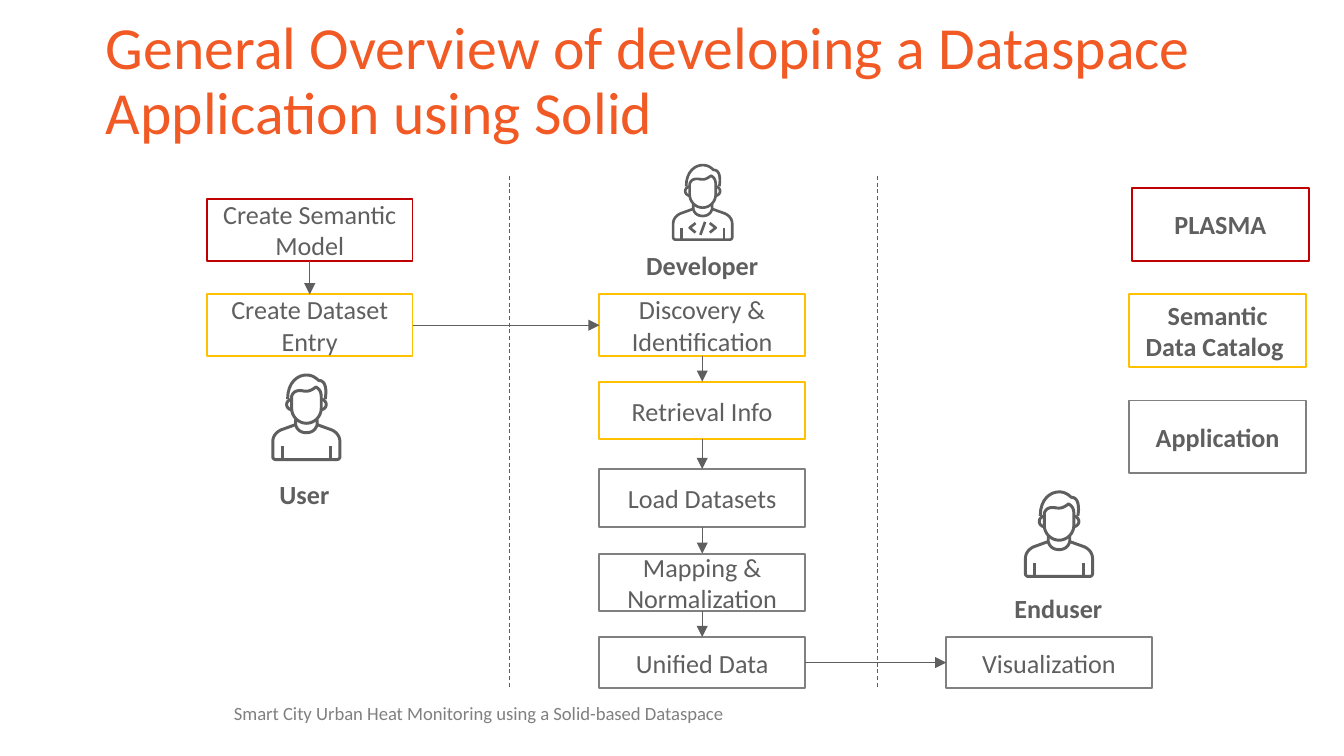
"""Build the overview slide of developing a dataspace application using Solid."""
import pptx
import pptx.dml.color
import pptx.enum.dml
import pptx.enum.shapes
import pptx.enum.text
import pptx.oxml
import pptx.oxml.ns
import pptx.util

Inches = pptx.util.Inches
Pt = pptx.util.Pt
Anchor = pptx.enum.text.MSO_ANCHOR
Align = pptx.enum.text.PP_ALIGN

THEME = {
    "font": "Calibri",
    "title": "F15A24", "ink": "5F5F5F", "footer": "808080",
    "plasma": "C00000", "catalog": "FFC000", "application": "808080",
    "title_size": 32, "body_size": 14, "footer_size": 10,
    "box_line": 1, "flow_line": 0.5, "icon_line": 1.6,
}

TITLE = "General Overview of developing a Dataspace Application using Solid"
FOOTER = "Smart City Urban Heat Monitoring using a Solid-based Dataspace"

STEP_WIDTH = 1.53
USER_LEFT, DEVELOPER_LEFT, ENDUSER_LEFT = 1.54, 4.46, 7.04
STEPS = [
    ("Create Semantic Model", USER_LEFT, 1.48, 0.46, "plasma"),
    ("Create Dataset Entry", USER_LEFT, 2.19, 0.46, "catalog"),
    ("Discovery & Identification", DEVELOPER_LEFT, 2.19, 0.46, "catalog"),
    ("Retrieval Info", DEVELOPER_LEFT, 2.84, 0.43, "catalog"),
    ("Load Datasets", DEVELOPER_LEFT, 3.49, 0.43, "application"),
    ("Mapping & Normalization", DEVELOPER_LEFT, 4.12, 0.43, "application"),
    ("Unified Data", DEVELOPER_LEFT, 4.74, 0.38, "application"),
    ("Visualization", ENDUSER_LEFT, 4.74, 0.38, "application"),
]
LEGEND_SIZE = (1.32, 0.54)
LEGEND = [
    ("PLASMA", 8.42, 1.4, "plasma"),
    ("Semantic Data Catalog ", 8.4, 2.19, "catalog"),
    ("Application", 8.4, 2.98, "application"),
]
ROLES = [
    ("User", (1.98, 3.51, 0.59, 0.34)),
    ("Developer", (4.71, 1.81, 1.22, 0.34)),
    ("Enduser", (7.45, 4.36, 0.86, 0.34)),
]
LANE_DIVIDERS = [3.79, 6.53]
LANE_TOP, LANE_BOTTOM = 1.31, 5.12

PERSON = [
    [(0.18, 0.38), (0.07, 0.42), (0.03, 0.44, 0.01, 0.47, 0.01, 0.51), (0.01, 0.62),
     (0.01, 0.63, 0.02, 0.64, 0.03, 0.64), (0.49, 0.64),
     (0.5, 0.64, 0.51, 0.63, 0.51, 0.62), (0.51, 0.51),
     (0.51, 0.47, 0.49, 0.44, 0.45, 0.42), (0.34, 0.38)],
    [(0.18, 0.34), (0.18, 0.38), (0.19, 0.42, 0.22, 0.44, 0.26, 0.44),
     (0.3, 0.44, 0.33, 0.42, 0.34, 0.38), (0.34, 0.34)],
    [(0.15, 0.17), (0.15, 0.26), (0.15, 0.32, 0.2, 0.37, 0.26, 0.37),
     (0.32, 0.37, 0.37, 0.32, 0.37, 0.26), (0.37, 0.17),
     (0.37, 0.13, 0.35, 0.11, 0.33, 0.1), (0.28, 0.14, 0.26, 0.13, 0.24, 0.13),
     (0.2, 0.12, 0.16, 0.13, 0.15, 0.17)],
    [(0.12, 0.19), (0.12, 0.06, 0.2, 0.01, 0.26, 0.01),
     (0.3, 0.01, 0.33, 0.03, 0.35, 0.05), (0.41, 0.05, 0.41, 0.13, 0.4, 0.19)],
    [(0.15, 0.19), (0.1, 0.2, 0.1, 0.26, 0.15, 0.27)],
    [(0.37, 0.19), (0.42, 0.2, 0.42, 0.26, 0.37, 0.27)],
    [(0.08, 0.54), (0.08, 0.64)],
    [(0.44, 0.54), (0.44, 0.64)],
]
CODE_SIGN = [
    [(0.2, 0.5), (0.15, 0.54), (0.2, 0.58)],
    [(0.32, 0.5), (0.37, 0.54), (0.32, 0.58)],
    [(0.28, 0.49), (0.24, 0.6)],
]
ICONS = [
    (2.02, 2.78, 1, PERSON),
    (5, 1.22, 0.88, PERSON + CODE_SIGN),
    (7.62, 3.65, 1, PERSON),
]


def color(name):
    return pptx.dml.color.RGBColor.from_string(THEME[name])


def write(shape, text, size="body_size", ink="ink", bold=False, align=Align.LEFT,
          anchor=Anchor.TOP, spacing=None):
    frame = shape.text_frame
    frame.word_wrap = True
    frame.vertical_anchor = anchor
    paragraph = frame.paragraphs[0]
    paragraph.alignment = align
    paragraph.line_spacing = spacing
    run = paragraph.add_run()
    run.text = text
    run.font.name = THEME["font"]
    run.font.size = Pt(THEME[size])
    run.font.bold = bold
    run.font.color.rgb = color(ink)
    return frame


def add_text(slide, bounds, text, **style):
    return write(slide.shapes.add_textbox(*map(Inches, bounds)), text, **style)


def add_box(slide, bounds, text, outline, bold=False):
    rectangle = pptx.enum.shapes.MSO_SHAPE.RECTANGLE
    shape = slide.shapes.add_shape(rectangle, *map(Inches, bounds))
    shape.shadow.inherit = False
    shape.fill.background()
    shape.line.color.rgb = color(outline)
    shape.line.width = Pt(THEME["box_line"])
    write(shape, text, bold=bold, align=Align.CENTER, anchor=Anchor.MIDDLE)
    return shape


def add_line(slide, start=(0, 0), end=(0, 0)):
    straight = pptx.enum.shapes.MSO_CONNECTOR.STRAIGHT
    connector = slide.shapes.add_connector(straight, *map(Inches, start + end))
    connector.line.color.rgb = color("ink")
    connector.line.width = Pt(THEME["flow_line"])
    properties = connector._element.spPr
    properties.append(pptx.oxml.parse_xml(
        "<a:effectLst %s/>" % pptx.oxml.ns.nsdecls("a")))
    return connector


def add_arrow(slide, source, target):
    same_column = source.left == target.left
    arrow = add_line(slide)
    arrow.begin_connect(source, 2 if same_column else 3)
    arrow.end_connect(target, 0 if same_column else 1)
    arrow.line._get_or_add_ln().append(pptx.oxml.parse_xml(
        '<a:tailEnd type="triangle" %s/>' % pptx.oxml.ns.nsdecls("a")))


def trace(stroke, samples=8):
    points = [stroke[0]]
    for part in stroke[1:]:
        if len(part) == 2:
            points.append(part)
            continue
        controls = [points[-1], part[:2], part[2:4], part[4:]]
        for index in range(1, samples + 1):
            t = index / samples
            weights = ((1 - t) ** 3, 3 * t * (1 - t) ** 2, 3 * t * t * (1 - t), t ** 3)
            points.append(tuple(sum(w * c[axis] for w, c in zip(weights, controls))
                                for axis in (0, 1)))
    return points


def add_icon(slide, left, top, scale, strokes):
    group = slide.shapes.add_group_shape()
    for stroke in strokes:
        points = [(Inches(left + x * scale), Inches(top + y * scale))
                  for x, y in trace(stroke)]
        builder = group.shapes.build_freeform(*points[0])
        builder.add_line_segments(points[1:], close=False)
        shape = builder.convert_to_shape()
        shape.shadow.inherit = False
        shape.fill.background()
        shape.line.color.rgb = color("ink")
        shape.line.width = Pt(THEME["icon_line"] * scale)


def main():
    presentation = pptx.Presentation()
    presentation.slide_width = Inches(10)
    presentation.slide_height = Inches(10) * 9 // 16
    slide = presentation.slides.add_slide(presentation.slide_layouts[6])

    add_text(slide, (0.69, 0.3, 8.62, 0.63), TITLE, size="title_size", ink="title",
             anchor=Anchor.MIDDLE, spacing=0.9)
    for icon in ICONS:
        add_icon(slide, *icon)
    for role, bounds in ROLES:
        add_text(slide, bounds, role, bold=True).margin_right = 0
    steps = [add_box(slide, (left, top, STEP_WIDTH, height), text, outline)
             for text, left, top, height, outline in STEPS]
    for source, target in zip(steps, steps[1:]):
        add_arrow(slide, source, target)
    for text, left, top, outline in LEGEND:
        add_box(slide, (left, top) + LEGEND_SIZE, text, outline, bold=True)
    for x in LANE_DIVIDERS:
        divider = add_line(slide, (x, LANE_TOP), (x, LANE_BOTTOM))
        divider.line.dash_style = pptx.enum.dml.MSO_LINE.DASH
    footer = add_text(slide, (1.74, 5.21, 3.75, 0.18), FOOTER, size="footer_size",
                      ink="footer", anchor=Anchor.BOTTOM, spacing=0.9)
    footer.margin_left = footer.margin_right = 0
    footer.margin_top = footer.margin_bottom = 0
    presentation.save("out.pptx")


if __name__ == "__main__":
    main()
